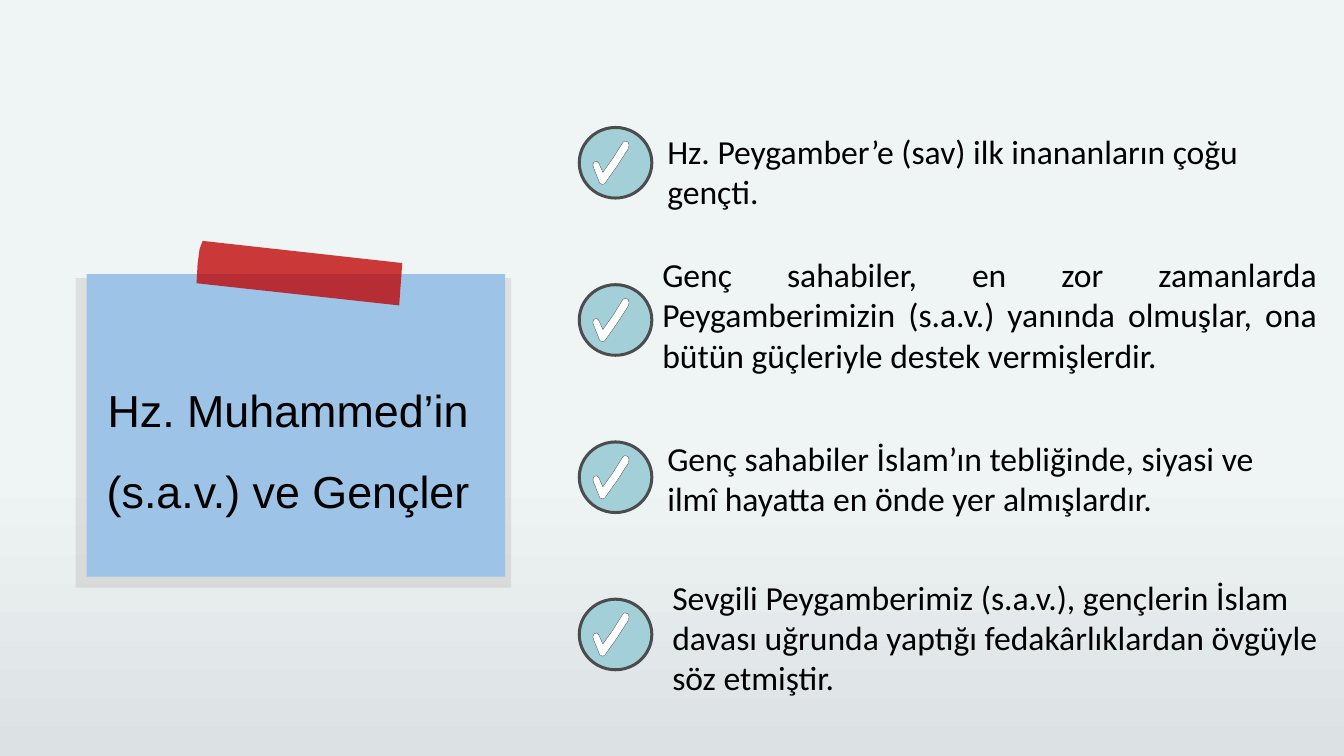
from lxml import etree
from pptx import Presentation
from pptx.dml.color import RGBColor
from pptx.enum.shapes import MSO_SHAPE
from pptx.enum.text import MSO_AUTO_SIZE, PP_ALIGN
from pptx.oxml.ns import qn
from pptx.util import Inches, Pt

RECTANGLE, OVAL, DONUT = MSO_SHAPE.RECTANGLE, MSO_SHAPE.OVAL, MSO_SHAPE.DONUT
LEFT, CENTER, JUSTIFY = PP_ALIGN.LEFT, PP_ALIGN.CENTER, PP_ALIGN.JUSTIFY
FIT_SHAPE = MSO_AUTO_SIZE.SHAPE_TO_FIT_TEXT

COLORS = {
    "background_top": "EFF4F5",
    "background_bottom": "DCE1E4",
    "note_shadow": "918C7F",
    "note": "9DC3E6",
    "tape": "C00000",
    "disc": "A3D0D8",
    "tick": "FFFFFF",
    "tick_line": "3F3F3F",
    "ring": "4C4C4D",
    "text": "000000",
}


def paint(shape, color, opacity=100):
    shape.shadow.inherit = False
    shape.fill.solid()
    shape.fill.fore_color.rgb = RGBColor.from_string(COLORS[color])
    shape.line.fill.background()
    if opacity < 100:
        color_element = shape._element.spPr.find(qn("a:solidFill"))[0]
        etree.SubElement(color_element, qn("a:alpha"), val=str(opacity * 1000))


def add_text(shapes, text, box, size, font_name, alignment, spacing):
    text_box = shapes.add_textbox(*[Inches(length) for length in box])
    frame = text_box.text_frame
    frame.word_wrap = True
    frame.auto_size = FIT_SHAPE
    paragraph = frame.paragraphs[0]
    paragraph.text = text
    for name, value in {"alignment": alignment, "line_spacing": spacing}.items():
        setattr(paragraph, name, value)
    font = paragraph.runs[0].font
    for name, value in {"size": Pt(size), "name": font_name}.items():
        setattr(font, name, value)
    font.color.rgb = RGBColor.from_string(COLORS["text"])


presentation = Presentation()
presentation.slide_width = Inches(13.33)
presentation.slide_height = Inches(7.5)
slide = presentation.slides.add_slide(presentation.slide_layouts[6])

background = slide.background.fill
background.gradient()
background.gradient_angle = 270
stops = [(0.62, "background_top"), (1, "background_bottom")]
for stop, (position, color) in zip(background.gradient_stops, stops):
    stop.position = position
    stop.color.rgb = RGBColor.from_string(COLORS[color])

note = slide.shapes.add_group_shape()
for color, box, opacity in [
    ("note_shadow", (0.75, 2.76, 4.32, 3.07), 19),
    ("note", (0.86, 2.72, 4.15, 3), 100),
]:
    sheet = note.shapes.add_shape(RECTANGLE, *[Inches(length) for length in box])
    paint(sheet, color, opacity)

TAPE = [(2.01, 2.39), (1.98, 2.47), (1.96, 2.62), (1.95, 2.81),
        (3.96, 3.03), (3.97, 2.88), (3.98, 2.75), (3.99, 2.61)]
tape_points = [(Inches(x), Inches(y)) for x, y in TAPE]
tape_builder = note.shapes.build_freeform(*tape_points[0])
tape_builder.add_line_segments(tape_points[1:], close=True)
paint(tape_builder.convert_to_shape(), "tape", 77)

add_text(slide.shapes, "Hz. Muhammed’in (s.a.v.) ve Gençler",
         (0.68, 3.48, 4.36, 1.72), 32, "Arial", CENTER, 1.5)

ITEMS = [
    ("Hz. Peygamber’e (sav) ilk inananların çoğu gençti.",
     (6.52, 1.25, 6.17, 0.91), LEFT),
    ("Genç sahabiler, en zor zamanlarda Peygamberimizin (s.a.v.) yanında "
     "olmuşlar, ona bütün güçleriyle destek vermişlerdir.",
     (6.47, 2.47, 6.69, 1.31), JUSTIFY),
    ("Genç sahabiler İslam’ın tebliğinde, siyasi ve ilmî hayatta en önde yer "
     "almışlardır.",
     (6.52, 4.29, 6.29, 0.91), LEFT),
    ("Sevgili Peygamberimiz (s.a.v.), gençlerin İslam davası uğrunda yaptığı "
     "fedakârlıklardan övgüyle söz etmiştir.",
     (6.57, 5.67, 6.6, 1.31), LEFT),
]
BADGE_LEFT, BADGE_TOP, BADGE_PITCH = 5.73, 1.25, 1.56
RING_WIDTH, RING_HEIGHT, RING_BAND = 0.75, 0.73, 0.03
TICK = [(0.47, 0.15), (0.45, 0.16), (0.35, 0.32), (0.25, 0.46), (0.21, 0.37),
        (0.19, 0.35), (0.16, 0.36), (0.15, 0.39), (0.16, 0.42), (0.22, 0.57),
        (0.25, 0.58), (0.27, 0.57), (0.39, 0.4), (0.5, 0.23), (0.51, 0.19),
        (0.5, 0.16)]

for index, (text, box, alignment) in enumerate(ITEMS):
    add_text(slide.shapes, text, box, 24, "Calibri", alignment, 1)
    top = BADGE_TOP + index * BADGE_PITCH
    badge = slide.shapes.add_group_shape()

    disc = badge.shapes.add_shape(OVAL, Inches(BADGE_LEFT + 0.02), Inches(top),
                                  Inches(0.71), Inches(0.7))
    paint(disc, "disc")

    tick_points = [(Inches(BADGE_LEFT + x), Inches(top + y)) for x, y in TICK]
    tick_builder = badge.shapes.build_freeform(*tick_points[0])
    tick_builder.add_line_segments(tick_points[1:], close=True)
    tick = tick_builder.convert_to_shape()
    paint(tick, "tick")
    tick.line.color.rgb = RGBColor.from_string(COLORS["tick_line"])
    tick.line.width = Pt(0.21)

    ring = badge.shapes.add_shape(DONUT, Inches(BADGE_LEFT), Inches(top),
                                  Inches(RING_WIDTH), Inches(RING_HEIGHT))
    ring.adjustments[0] = RING_BAND / RING_HEIGHT
    paint(ring, "ring")

presentation.save("out.pptx")
